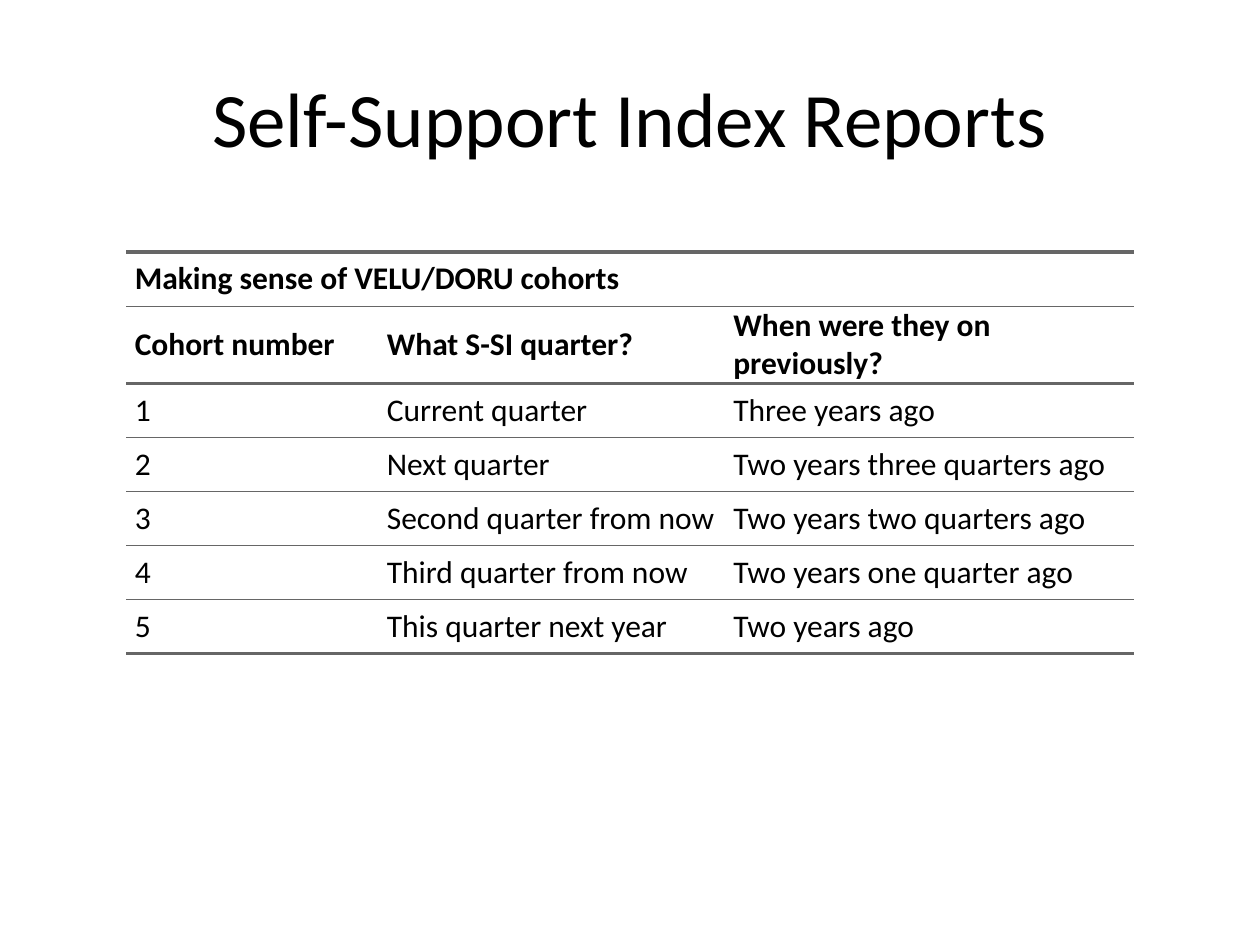
import pptx
import pptx.dml.color
import pptx.enum.text
import pptx.oxml.ns
import pptx.util
from lxml import etree

Inches = pptx.util.Inches
Pt = pptx.util.Pt

RULE_COLOR = "666666"
THIN, THICK = 0.5, 2
COLUMN_WIDTHS = [2, 2.75, 3.25]
ROW_HEIGHT = 0.43
HEADER_ROWS = 2
COHORT_ROWS = [
    ["Making sense of VELU/DORU cohorts"],
    ["Cohort number", "What S-SI quarter?", "When were they on previously?"],
    ["1", "Current quarter", "Three years ago"],
    ["2", "Next quarter", "Two years three quarters ago"],
    ["3", "Second quarter from now", "Two years two quarters ago"],
    ["4", "Third quarter from now", "Two years one quarter ago"],
    ["5", "This quarter next year", "Two years ago"],
]


def color(hex_value):
    """Return the RGB colour for a hex string."""
    return pptx.dml.color.RGBColor.from_string(hex_value)


def write_text(frame, text, size=18, bold=False, align="LEFT", spacing=0, indent=0):
    """Put one formatted paragraph in a text frame."""
    frame.word_wrap = True
    paragraph = frame.paragraphs[0]
    paragraph.alignment = getattr(pptx.enum.text.PP_ALIGN, align)
    paragraph.space_before = paragraph.space_after = Pt(spacing)
    properties = paragraph._p.get_or_add_pPr()
    properties.set("marL", str(Inches(indent)))
    properties.set("indent", "0")
    run = paragraph.add_run()
    run.text = text
    run.font.name = "Calibri"
    run.font.size = Pt(size)
    run.font.bold = bold
    run.font.color.rgb = color("000000")


def add_border(cell, side, width):
    """Draw one side of a cell, or clear it when the width is zero."""
    qn = pptx.oxml.ns.qn
    line = etree.SubElement(cell._tc.get_or_add_tcPr(), qn("a:ln" + side), w=str(Pt(width)))
    if width:
        fill = etree.SubElement(line, qn("a:solidFill"))
        etree.SubElement(fill, qn("a:srgbClr"), val=RULE_COLOR)
    else:
        etree.SubElement(line, qn("a:noFill"))


def format_cell(cell, top, bottom):
    """Set the margins, rules and clear fill of a cell."""
    cell.margin_left = cell.margin_right = cell.margin_top = cell.margin_bottom = 0
    cell.vertical_anchor = pptx.enum.text.MSO_ANCHOR.MIDDLE
    for side, width in (("L", 0), ("R", 0), ("T", top), ("B", bottom)):
        add_border(cell, side, width)
    cell.fill.background()


def add_title(slide, text):
    """Place and fill the title placeholder."""
    title = slide.shapes.title
    title.left, title.top = Inches(0.5), Inches(0.3)
    title.width, title.height = Inches(9), Inches(1.25)
    title.text_frame.vertical_anchor = pptx.enum.text.MSO_ANCHOR.MIDDLE
    write_text(title.text_frame, text, size=44, align="CENTER")


def add_cohort_table(slide):
    """Add the ruled table of cohorts under its spanning heading."""
    row_count = len(COHORT_ROWS)
    table = slide.shapes.add_table(
        row_count, len(COLUMN_WIDTHS), Inches(1), Inches(2),
        Inches(sum(COLUMN_WIDTHS)), Inches(ROW_HEIGHT * row_count)).table
    table.first_row = table.horz_banding = False
    for column, width in zip(table.columns, COLUMN_WIDTHS):
        column.width = Inches(width)
    table.cell(0, 0).merge(table.cell(0, len(COLUMN_WIDTHS) - 1))

    thick_rules = {0, HEADER_ROWS, row_count}
    rules = [THICK if i in thick_rules else THIN for i in range(row_count + 1)]
    for i, (row, texts) in enumerate(zip(table.rows, COHORT_ROWS)):
        row.height = Inches(ROW_HEIGHT)
        for cell in row.cells:
            format_cell(cell, rules[i], rules[i + 1])
        for cell, text in zip(row.cells, texts):
            write_text(cell.text_frame, text, bold=i < HEADER_ROWS, spacing=5, indent=0.07)


def main():
    """Build and save the slide."""
    deck = pptx.Presentation()
    deck.slide_width, deck.slide_height = Inches(10), Inches(7.5)
    slide = deck.slides.add_slide(deck.slide_layouts[5])
    add_title(slide, "Self-Support Index Reports")
    add_cohort_table(slide)
    deck.save("out.pptx")


if __name__ == "__main__":
    main()
